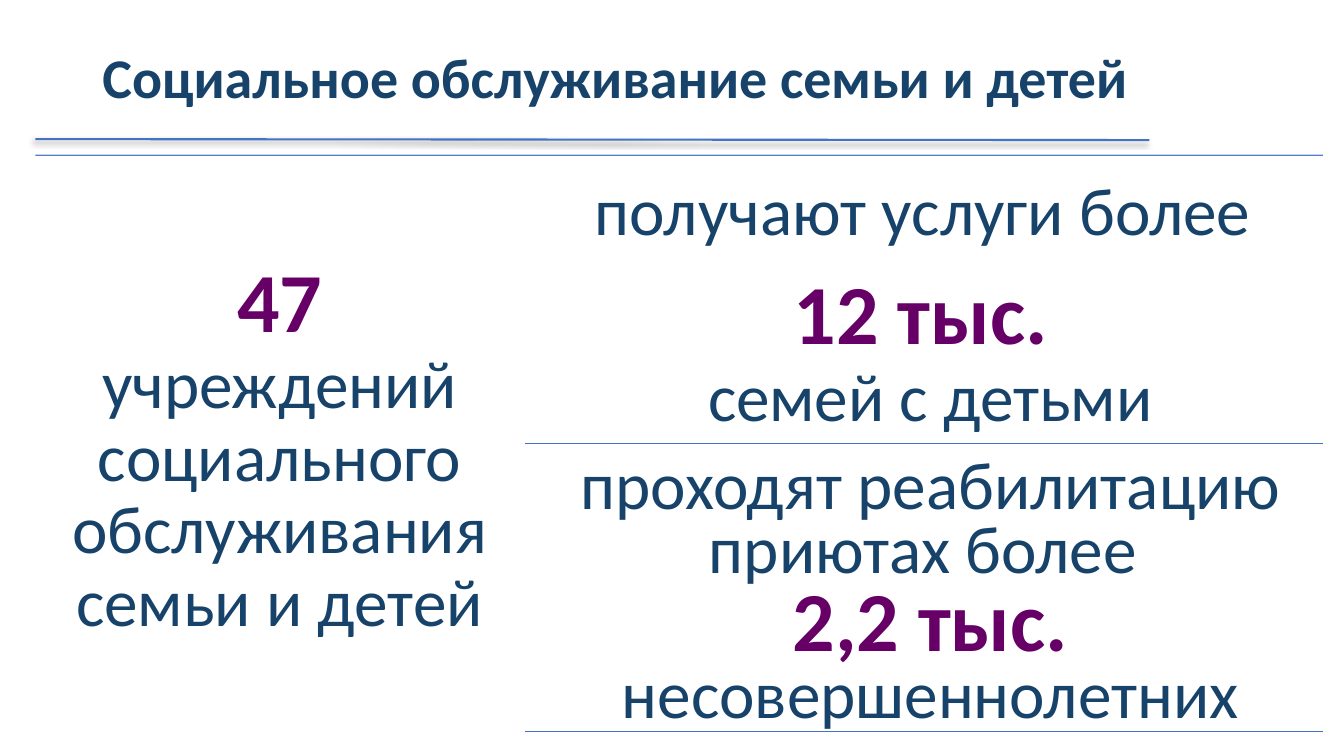
import pptx
import pptx.dml.color
import pptx.enum.shapes
import pptx.enum.text
import pptx.oxml
import pptx.oxml.ns
import pptx.util
from pptx.util import Inches

NAVY, PURPLE, BLUE = "17436A", "660066", "4472C4"
BREAK = "\n"


def color(value):
    return pptx.dml.color.RGBColor.from_string(value)


def effects(content=""):
    return pptx.oxml.parse_xml(
        f"<a:effectLst {pptx.oxml.ns.nsdecls('a')}>{content}</a:effectLst>")


SHADOW = ('<a:outerShdw blurRad="50800" dist="38100" dir="8100000">'
          '<a:srgbClr val="000000"><a:alpha val="40000"/></a:srgbClr>'
          '</a:outerShdw>')


class SlideWriter:
    font = "Calibri"

    def __init__(self, s):
        self.s = s

    def rule(self, x1, y1, x2, y2, width=1, effect="", alpha=None):
        sp = self.s.shapes.add_connector(
            pptx.enum.shapes.MSO_CONNECTOR.STRAIGHT,
            Inches(x1), Inches(y1), Inches(x2), Inches(y2))
        sp.line.color.rgb = color(BLUE)
        sp.line.width = pptx.util.Pt(width)
        if alpha:
            clr = sp.line._ln.find(".//" + pptx.oxml.ns.qn("a:srgbClr"))
            clr.append(pptx.oxml.parse_xml(
                f"<a:alpha {pptx.oxml.ns.nsdecls('a')} val='{alpha * 1000}'/>"))
        sp._element.spPr.append(effects(effect))

    def text(self, x, y, w, h, paragraphs, margins, spacing=0.9):
        """Place centred paragraphs, each a list of (text, size, colour, bold) or BREAK."""
        sp = self.s.shapes.add_textbox(Inches(x), Inches(y), Inches(w), Inches(h))
        tf = sp.text_frame
        tf.word_wrap = True
        tf.vertical_anchor = pptx.enum.text.MSO_ANCHOR.MIDDLE
        tf.margin_left = tf.margin_right = Inches(margins[0])
        tf.margin_top = tf.margin_bottom = Inches(margins[1])
        for i, runs in enumerate(paragraphs):
            p = tf.add_paragraph() if i else tf.paragraphs[0]
            p.alignment = pptx.enum.text.PP_ALIGN.CENTER
            p.line_spacing = spacing
            p.font.name = self.font
            if i < len(paragraphs) - 1:
                p.space_after = pptx.util.Pt(16)
            for run in runs:
                if run == BREAK:
                    p.add_line_break()
                    continue
                r = p.add_run()
                r.text, size, fill, r.font.bold = run
                r.font.size = pptx.util.Pt(size)
                r.font.color.rgb = color(fill)


def label(text):
    return text, 48, NAVY, False


def figure(text):
    return text, 60, PURPLE, True


def main():
    prs = pptx.Presentation()
    prs.slide_width, prs.slide_height = Inches(13.33), Inches(7.5)
    slide = SlideWriter(prs.slides.add_slide(prs.slide_layouts[6]))

    slide.text(0.35, 0.41, 11.5, 0.77,
               [[("Социальное обслуживание семьи и детей", 40, NAVY, True)]],
               (0.1, 0.05))
    slide.rule(0.35, 1.38, 11.4, 1.39, 1.5, SHADOW)
    slide.rule(0.35, 1.54, 13.12, 1.54, alpha=90)

    slide.text(0.35, 1.54, 4.85, 5.86,
               [[figure("47 "),
                 label("учреждений социального обслуживания семьи и детей")]],
               (0.25, 0.25))

    families = [[label("получают услуги более ")],
                [figure("12 тыс. "), BREAK, label("семей с детьми")]]
    minors = [[label("проходят реабилитацию приютах более "), BREAK,
               figure("2,2 тыс. "), label("несовершеннолетних")]]
    for i, (paragraphs, spacing) in enumerate([(families, 0.9), (minors, 0.8)]):
        top = 1.68 + 2.86 * i
        slide.text(5.35, top, 7.76, 2.72, paragraphs, (0.2, 0.2), spacing)
        slide.rule(5.21, top + 2.72, 13.12, top + 2.72)

    prs.save("out.pptx")


if __name__ == "__main__":
    main()
